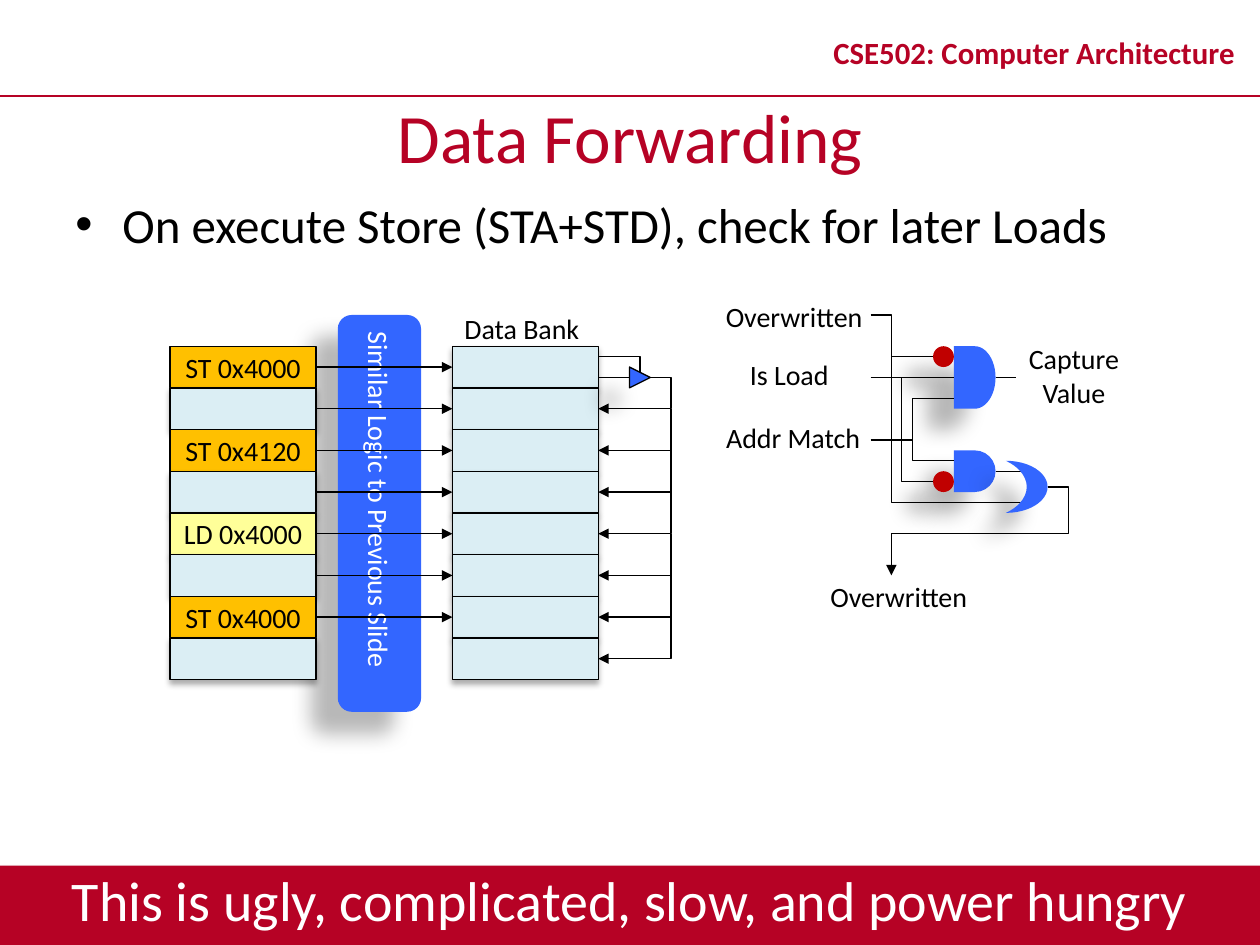
import dataclasses

import lxml.etree
import pptx
import pptx.dml.color
import pptx.enum.shapes
import pptx.enum.text
import pptx.oxml.ns
import pptx.util

Cm = pptx.util.Cm
Pt = pptx.util.Pt
RGBColor = pptx.dml.color.RGBColor
SHAPE = pptx.enum.shapes.MSO_SHAPE
ALIGN = pptx.enum.text.PP_ALIGN
ANCHOR = pptx.enum.text.MSO_ANCHOR
AUTO_SIZE = pptx.enum.text.MSO_AUTO_SIZE
qn = pptx.oxml.ns.qn

CRIMSON = RGBColor(0xB6, 0x02, 0x25)
BLUE = RGBColor(0x33, 0x66, 0xFF)
ORANGE = RGBColor(0xFF, 0xC0, 0x00)
YELLOW = RGBColor(0xFF, 0xFF, 0x99)
PALE = RGBColor(0xDB, 0xEE, 0xF4)
RED = RGBColor(0xC0, 0x00, 0x00)
BLACK = RGBColor(0, 0, 0)
WHITE = RGBColor(0xFF, 0xFF, 0xFF)

FONT = "Calibri"
STEP = 0.21
ROW_STEPS = 4
CELL_STEPS = 14
BAND_SHADOW = (35, 3.1, 1.8, 90)
CELL_SHADOW = (32, 3.5, 2.2, 90)
DEEP_SHADOW = (28, 11.8, 19.7, 141)
QUEUE = [("ST 0x4000", ORANGE), ("", PALE), ("ST 0x4120", ORANGE), ("", PALE),
         ("LD 0x4000", YELLOW), ("", PALE), ("ST 0x4000", ORANGE), ("", PALE)]


@dataclasses.dataclass
class Box:
    left: float
    top: float
    width: float
    height: float

    def inner(self, left, top, width, height):
        return Box(self.left + left, self.top + top, width, height)

    def grid(self, column, row, columns, rows):
        return self.inner(column * STEP, row * STEP, columns * STEP, rows * STEP)

    def point(self, column, row):
        return Cm(self.left + column * STEP), Cm(self.top + row * STEP)

    def frame(self):
        return Cm(self.left), Cm(self.top), Cm(self.width), Cm(self.height)


def add_text(shape, text, size=16, color=BLACK, bold=False, wrap=False, anchor=ANCHOR.MIDDLE):
    frame = shape.text_frame
    frame.word_wrap = wrap
    frame.vertical_anchor = anchor
    for index, line in enumerate(text.split("\n")):
        paragraph = frame.add_paragraph() if index else frame.paragraphs[0]
        paragraph.alignment = ALIGN.CENTER
        run = paragraph.add_run()
        run.text = line
        run.font.name, run.font.size, run.font.bold = FONT, Pt(size), bold
        run.font.color.rgb = color
    return frame


def add_label(slide, box, text, **style):
    return add_text(slide.shapes.add_textbox(*box.frame()), text, **style)


def add_block(slide, kind, box, fill, shadow=None, outlined=False):
    block = slide.shapes.add_shape(kind, *box.frame())
    block.fill.solid()
    block.fill.fore_color.rgb = fill
    if outlined:
        block.line.color.rgb = BLACK
        block.line.width = Pt(0.75)
    else:
        block.line.fill.background()
    block.shadow.inherit = False
    if shadow:
        opacity, blur, distance, angle = shadow
        effects = block._element.spPr.find(qn("a:effectLst"))
        outer = lxml.etree.SubElement(
            effects, qn("a:outerShdw"), blurRad=str(Pt(blur)), dist=str(Pt(distance)),
            dir=str(angle * 60000), algn="ctr", rotWithShape="0")
        tint = lxml.etree.SubElement(outer, qn("a:srgbClr"), val=str(BLACK))
        lxml.etree.SubElement(tint, qn("a:alpha"), val=str(opacity * 1000))
    return block


def add_wire(slide, points, arrow=False, color=BLACK, width=0.75):
    if len(points) == 2:
        wire = slide.shapes.add_connector(
            pptx.enum.shapes.MSO_CONNECTOR.STRAIGHT, *points[0], *points[1])
    else:
        builder = slide.shapes.build_freeform(*points[0])
        builder.add_line_segments(points[1:], close=False)
        wire = builder.convert_to_shape()
        wire.fill.background()
        wire.shadow.inherit = False
    wire.line.color.rgb = color
    wire.line.width = Pt(width)
    properties = wire._element.spPr
    if arrow:
        lxml.etree.SubElement(properties.find(qn("a:ln")), qn("a:tailEnd"), type="triangle")
    if len(points) == 2:
        lxml.etree.SubElement(properties, qn("a:effectLst"))
    return wire


def add_header(slide, box):
    rule = [(Cm(box.left), Cm(box.top + box.height)),
            (Cm(box.left + box.width), Cm(box.top + box.height))]
    add_wire(slide, rule, color=CRIMSON, width=1)
    course = add_label(slide, box.inner(16.3, 0.33, 9.1, 1.6), "CSE502: Computer Architecture",
                       size=17.6, color=CRIMSON, bold=True, wrap=True)
    course.paragraphs[0].line_spacing = 0.8


def add_bullet(slide, box, text):
    frame = add_label(slide, box, text, size=28, wrap=True, anchor=ANCHOR.TOP)
    paragraph = frame.paragraphs[0]
    paragraph.alignment = ALIGN.LEFT
    properties = paragraph._p.get_or_add_pPr()
    properties.set("marL", str(Cm(0.95)))
    properties.set("indent", str(-Cm(0.95)))
    lxml.etree.SubElement(properties, qn("a:buFont"), typeface="Arial")
    lxml.etree.SubElement(properties, qn("a:buChar"), char="•")


def add_footer(slide, box, text):
    add_block(slide, SHAPE.RECTANGLE, box, CRIMSON, BAND_SHADOW)
    add_label(slide, box.inner(0, -0.13, box.width, box.height), text,
              size=32, color=WHITE, wrap=True, anchor=ANCHOR.TOP)


def add_logic(slide, box):
    logic = add_block(slide, SHAPE.ROUNDED_RECTANGLE, box, BLUE, DEEP_SHADOW)
    frame = add_text(logic, "Similar Logic to Previous Slide", color=WHITE)
    frame._txBody.bodyPr.set("vert", "eaVert")


def add_cells(slide, box, entries):
    cells = []
    for index, (text, fill) in enumerate(entries):
        place = box.grid(0, index * ROW_STEPS, CELL_STEPS, ROW_STEPS)
        shadow = None if fill == ORANGE else CELL_SHADOW
        cell = add_block(slide, SHAPE.RECTANGLE, place, fill, shadow, outlined=True)
        if text:
            add_text(cell, text)
        cells.append(cell)
    return cells


def add_forwarding(slide, box, rows):
    buffer = add_block(slide, SHAPE.ISOSCELES_TRIANGLE, box.grid(3, 2, 2, 2), BLUE,
                       DEEP_SHADOW, outlined=True)
    buffer.rotation = 90
    add_wire(slide, [box.point(0, 1), box.point(4, 1), box.point(4, 2.5)])
    add_wire(slide, [box.point(0, 3), box.point(3, 3)])
    add_wire(slide, [box.point(*p) for p in [(5, 3), (7, 3), (7, 6), (0, 6)]], arrow=True)
    for index in range(2, rows):
        middle = (index + 0.5) * ROW_STEPS
        bus = [(7, middle - ROW_STEPS), (7, middle), (0, middle)]
        add_wire(slide, [box.point(*p) for p in bus], arrow=True)


def add_gates(slide, box):
    for row, height, dot_row in [(3, 6, 3), (13, 4, 15)]:
        add_block(slide, SHAPE.FLOWCHART_DELAY, box.grid(8, row, 4, height), BLUE, DEEP_SHADOW)
        add_block(slide, SHAPE.OVAL, box.grid(6, dot_row, 2, 2), RED, DEEP_SHADOW)
    for route in [
        [(12, 6), (14, 6)],
        [(0, 6), (8, 6)],
        [(0, 12), (4, 12), (4, 8), (8, 8)],
        [(3, 6), (3, 16), (6, 16)],
        [(0, 0), (2, 0), (2, 18), (8, 18)],
        [(2, 4), (6, 4)],
        [(4, 12), (4, 14), (8, 14)],
        [(12, 15), (15, 15)],
        [(8, 18), (15, 18)],
        [(17, 16.5), (19, 16.5), (19, 19)],
    ]:
        add_wire(slide, [box.point(*p) for p in route])
    add_wire(slide, [box.point(*p) for p in [(19, 19), (19, 21), (2, 21), (2, 25)]], arrow=True)
    moon = add_block(slide, SHAPE.MOON, box.grid(13, 14, 4, 5), BLUE, DEEP_SHADOW)
    moon._element.spPr.find(qn("a:xfrm")).set("flipH", "1")
    for text, center, top, width, height in [
        ("Overwritten", -1.54, -0.43, 3.43, 0.94),
        ("Is Load", -1.64, 0.74, 2.16, 0.94),
        ("Addr Match", -1.56, 2.01, 3.28, 0.94),
        ("Capture\nValue", 4.1, 0.41, 2.41, 1.63),
        ("Overwritten", 0.57, 5.21, 3.43, 0.94),
    ]:
        label = add_label(slide, box.inner(center - width / 2, top, width, height), text,
                          anchor=ANCHOR.TOP)
        label.auto_size = AUTO_SIZE.SHAPE_TO_FIT_TEXT


def add_data_path(slide, box):
    add_logic(slide, box.inner(3.38, 0, 1.68, 8))
    queue_box = box.inner(0, 0.63, 2.94, 6.72)
    bank_box = box.inner(5.69, 0.63, 2.94, 6.72)
    queue = add_cells(slide, queue_box, QUEUE)
    bank = add_cells(slide, bank_box, [("", PALE)] * len(QUEUE))
    add_forwarding(slide, bank_box.inner(bank_box.width, 0, 1.47, 6.72), len(QUEUE))
    for entry, slot in list(zip(queue, bank))[:-1]:
        link = add_wire(slide, [(0, 0), (0, 0)], arrow=True)
        link.begin_connect(entry, 3)
        link.end_connect(slot, 1)
    label = add_label(slide, bank_box.inner(-0.05, -0.83, 2.9, 0.94), "Data Bank",
                      anchor=ANCHOR.TOP)
    label.auto_size = AUTO_SIZE.SHAPE_TO_FIT_TEXT


def main():
    deck = pptx.Presentation()
    deck.slide_width, deck.slide_height = Cm(25.4), Cm(19.05)
    slide = deck.slides.add_slide(deck.slide_layouts[6])
    add_header(slide, Box(0, 0, 25.4, 1.93))
    add_label(slide, Box(0, 1.93, 25.4, 1.6), "Data Forwarding",
              size=39.6, color=CRIMSON, wrap=True)
    add_bullet(slide, Box(1.27, 3.8, 22.86, 13.5),
               "On execute Store (STA+STD), check for later Loads")
    add_data_path(slide, Box(3.43, 6.35, 10.1, 8))
    add_gates(slide, Box(17.55, 6.35, 4, 5.25))
    add_footer(slide, Box(0, 17.45, 25.4, 1.6),
               "This is ugly, complicated, slow, and power hungry")
    deck.save("out.pptx")


if __name__ == "__main__":
    main()
